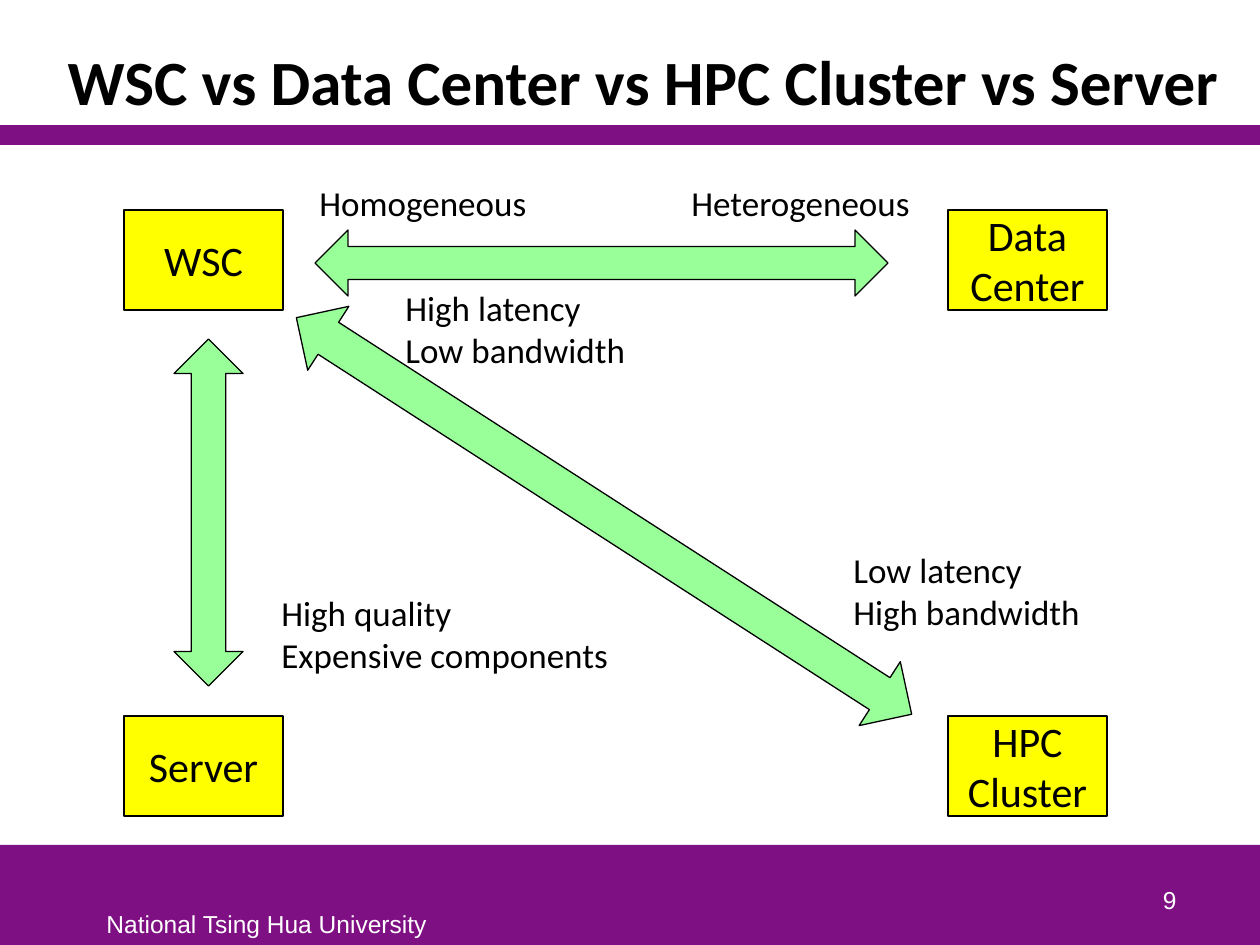
from pptx import Presentation
from pptx.dml.color import RGBColor
from pptx.enum.shapes import MSO_SHAPE
from pptx.enum.text import MSO_ANCHOR, PP_ALIGN
from pptx.util import Pt

COLORS = {"purple": "7F1084", "yellow": "FFFF00", "green": "99FF99",
          "black": "000000", "white": "FFFFFF"}
PX_PER_INCH = 126

TITLE = "WSC vs Data Center vs HPC Cluster vs Server"
BANDS = [(0, 845, 1260, 100), (0, 125, 1260, 20)]

# (column, row, text)
SYSTEMS = [(0, 0, "WSC"), (0, 1, "Server"),
           (1, 0, "Data\nCenter"), (1, 1, "HPC\nCluster")]
COLUMN_LEFTS = (124, 948)
ROW_TOPS = (210, 716)
SYSTEM_SIZE = (159, 100)

# (left, top, width, height, rotation)
ARROWS = [(315, 230, 573, 66, 0),
          (35, 478, 347, 69, 90),
          (238, 478, 732, 76, 32.8)]

# (left, top, width, height, text)
LABELS = [(307, 175, 234, 55, "Homogeneous"),
          (679, 175, 246, 55, "Heterogeneous"),
          (393, 280, 247, 97, "High latency\nLow bandwidth"),
          (841, 542, 253, 97, "Low latency\nHigh bandwidth"),
          (269, 585, 355, 97, "High quality\nExpensive components")]


def px(value):
    return round(value * 914400 / PX_PER_INCH)


def rgb(name):
    return RGBColor.from_string(COLORS[name])


def write(shape, text, size, font="Calibri", color="black", bold=False,
          align=PP_ALIGN.LEFT, anchor=MSO_ANCHOR.TOP, wrap=False):
    frame = shape.text_frame
    frame.text = text
    frame.word_wrap = wrap
    frame.vertical_anchor = anchor
    for para in frame.paragraphs:
        para.alignment = align
        for span in para.runs:
            span.font.name = font
            span.font.size = Pt(size)
            span.font.bold = bold
            span.font.color.rgb = rgb(color)


def add_filled(slide, kind, bounds, fill, outlined=True):
    shape = slide.shapes.add_shape(kind, *map(px, bounds))
    shape.shadow.inherit = False
    shape.fill.solid()
    shape.fill.fore_color.rgb = rgb(fill)
    if outlined:
        shape.line.color.rgb = rgb("black")
        shape.line.width = Pt(0.75)
    else:
        shape.line.fill.background()
    return shape


def add_text(slide, bounds, text, size, **style):
    box = slide.shapes.add_textbox(*map(px, bounds))
    write(box, text, size, **style)


def main():
    deck = Presentation()
    deck.slide_width, deck.slide_height = px(1260), px(945)
    slide = deck.slides.add_slide(deck.slide_layouts[5])

    for bounds in BANDS:
        add_filled(slide, MSO_SHAPE.RECTANGLE, bounds, "purple", outlined=False)
    add_text(slide, (94, 903, 348, 42), "National Tsing Hua University", 14,
             font="Arial", color="white")
    add_text(slide, (927, 858, 262, 63), "9", 14, font="Arial", color="white",
             align=PP_ALIGN.RIGHT, anchor=MSO_ANCHOR.BOTTOM, wrap=True)

    title = slide.shapes.title
    title.left, title.top, title.width, title.height = map(px, (55, 32, 1205, 93))
    write(title, TITLE, 36, bold=True, anchor=MSO_ANCHOR.BOTTOM, wrap=True)
    title.text_frame.paragraphs[0].line_spacing = 0.85

    for column, row, name in SYSTEMS:
        bounds = (COLUMN_LEFTS[column], ROW_TOPS[row], *SYSTEM_SIZE)
        box = add_filled(slide, MSO_SHAPE.RECTANGLE, bounds, "yellow")
        write(box, name, 24, align=PP_ALIGN.CENTER, anchor=MSO_ANCHOR.MIDDLE)

    for *bounds, rotation in ARROWS:
        arrow = add_filled(slide, MSO_SHAPE.LEFT_RIGHT_ARROW, bounds, "green")
        arrow.rotation = rotation

    for *bounds, text in LABELS:
        add_text(slide, bounds, text, 20)

    deck.save("out.pptx")


if __name__ == "__main__":
    main()
